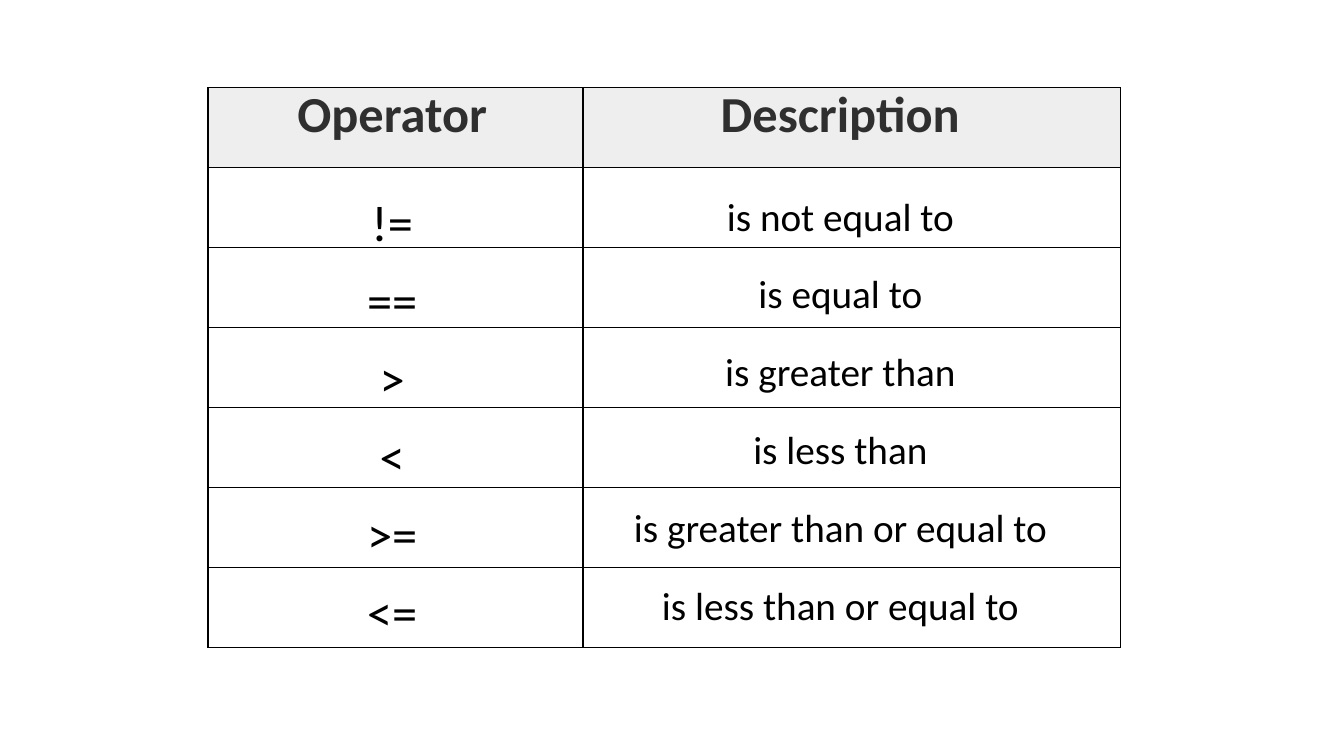
from lxml.etree import SubElement
from pptx import Presentation
from pptx.dml.color import RGBColor as Color
from pptx.enum.text import PP_ALIGN as Align
from pptx.oxml import parse_xml
from pptx.oxml.ns import nsdecls, qn
from pptx.util import Inches, Pt

BLACK = Color(0x00, 0x00, 0x00)
WHITE = Color(0xFF, 0xFF, 0xFF)
GREY = Color(0xBF, 0xBF, 0xBF)

HEADINGS = ("Operator", "Description")
OPERATORS = {
    "!=": "is not equal to",
    "==": "is equal to",
    ">": "is greater than",
    "<": "is less than",
    ">=": "is greater than or equal to",
    "<=": "is less than or equal to",
}


class SlideBuilder:
    font = "Calibri"

    def __init__(self, deck):
        self.width, self.height = deck.slide_width, deck.slide_height
        self.slide = deck.slides.add_slide(deck.slide_layouts[6])

    def table(self, left, top, columns, rows, line_color, line_width):
        """Add an unfilled ruled table; lengths are percentages of the slide."""
        across = [int(self.width * share / 100) for share in columns]
        down = [int(self.height * share / 100) for share in rows]
        table = self.slide.shapes.add_table(
            len(rows), len(columns),
            int(self.width * left / 100), int(self.height * top / 100),
            sum(across), sum(down)).table
        table.first_row = table.horz_banding = False
        for column, width in zip(table.columns, across):
            column.width = width
        for row, height in zip(table.rows, down):
            row.height = height
        for cell in table.iter_cells():
            cell.fill.background()
            self.borders(cell, line_color, line_width)
        return table

    def borders(self, cell, color, width):
        properties = cell._tc.get_or_add_tcPr()
        for position, side in enumerate("LRTB"):
            properties.insert(position, parse_xml(
                f'<a:ln{side} {nsdecls("a")} w="{Pt(width)}"><a:solidFill>'
                f'<a:srgbClr val="{color}"/></a:solidFill></a:ln{side}>'))

    def tint(self, cell, color, opacity):
        """Fill the cell with a see-through colour; opacity is in percent."""
        cell.fill.solid()
        cell.fill.fore_color.rgb = color
        value = cell._tc.tcPr.find(qn("a:solidFill")).find(qn("a:srgbClr"))
        SubElement(value, qn("a:alpha")).set("val", str(opacity * 1000))

    def text(self, cell, words, size, bold=False):
        para = cell.text_frame.paragraphs[0]
        para.alignment = Align.CENTER
        span = para.add_run()
        span.text = words
        style = {"name": self.font, "size": Pt(size), "bold": bold}
        for name, value in style.items():
            setattr(span.font, name, value)
        span.font.color.rgb = BLACK


def main():
    deck = Presentation()
    deck.slide_width, deck.slide_height = Inches(13.33), Inches(7.5)
    builder = SlideBuilder(deck)

    row_count = len(OPERATORS) + 1
    wording = builder.table(16.67, 10.56, (25.02, 41.67),
                            [14.4] + [10.3] * len(OPERATORS), WHITE, 3)
    for column, heading in enumerate(HEADINGS):
        builder.text(wording.cell(0, column), heading, 36, bold=True)
    for row, (operator, meaning) in enumerate(OPERATORS.items(), start=1):
        builder.text(wording.cell(row, 0), operator, 36)
        builder.text(wording.cell(row, 1), meaning, 28)

    # The ruled grid lies over the wording, so its header tint softens the text.
    grid = builder.table(15.48, 11.57, (27.9, 40.02),
                         [10.58] * row_count, BLACK, 1)
    for cell in grid.rows[0].cells:
        builder.tint(cell, GREY, 25)

    deck.save("out.pptx")


if __name__ == "__main__":
    main()
